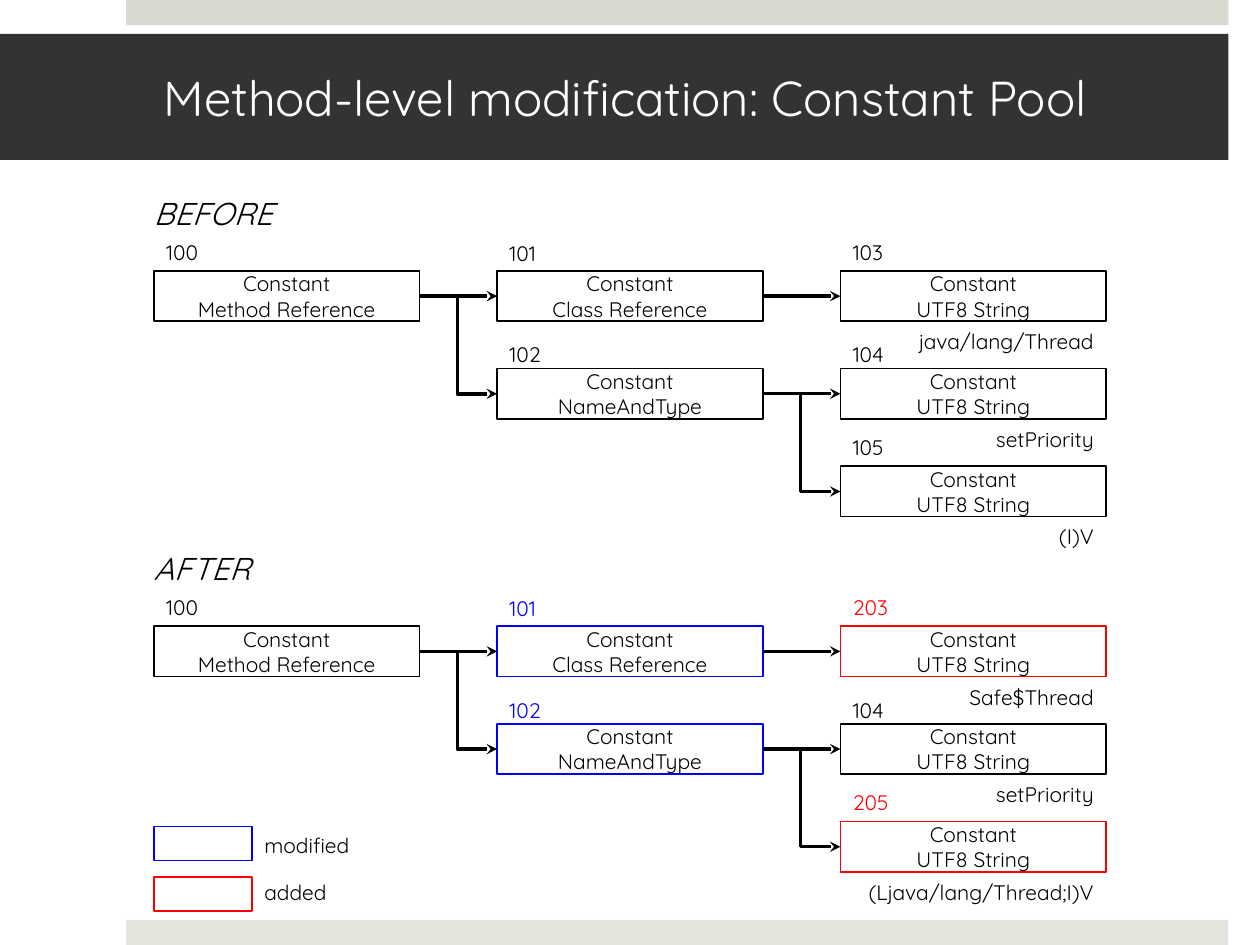
import copy
from dataclasses import dataclass

import pptx
import pptx.util
import pptx.dml.color
import pptx.enum.shapes
import pptx.enum.text
import pptx.oxml
import pptx.oxml.ns
from pptx.util import Inches

ALIGN = pptx.enum.text.PP_ALIGN
ANCHOR = pptx.enum.text.MSO_ANCHOR
qn = pptx.oxml.ns.qn


@dataclass(frozen=True)
class Theme:
    font: str = "Quicksand"
    title: int = 28
    heading: int = 18
    body: int = 12
    black: str = "000000"
    white: str = "FFFFFF"
    dark: str = "333333"
    top_band: str = "D6D9CD"
    bottom_band: str = "E4E6DE"
    modified: str = "0000FF"
    added: str = "FF0000"


THEME = Theme()


def rgb(value):
    return pptx.dml.color.RGBColor.from_string(value)


def write(tf, text, size=THEME.body, color=THEME.black, italic=None,
          align=ALIGN.LEFT, anchor=ANCHOR.TOP):
    """Fill a text frame with one paragraph; a newline is a line break."""
    tf.word_wrap = True
    tf.vertical_anchor = anchor
    p = tf.paragraphs[0]
    p.alignment = align
    p.text = text
    for r in p.runs:
        r.font.name, r.font.size = THEME.font, pptx.util.Pt(size)
        r.font.color.rgb, r.font.italic = rgb(color), italic
    for br in p._p.findall(qn("a:br")):
        br.append(copy.deepcopy(p.runs[0]._r.rPr))


class Painter:
    def __init__(self, s, theme):
        self.s, self.theme = s, theme

    def rect(self, x, y, w, h, fill, line=None):
        sp = self.s.shapes.add_shape(
            pptx.enum.shapes.MSO_SHAPE.RECTANGLE,
            Inches(x), Inches(y), Inches(w), Inches(h))
        sp.shadow.inherit = False
        sp.fill.solid()
        sp.fill.fore_color.rgb = rgb(fill)
        if line:
            sp.line.color.rgb = rgb(line)
            sp.line.width = pptx.util.Pt(1)
        else:
            sp.line.fill.background()
        return sp

    def title(self, text):
        sp = self.rect(0, 0.27, 9.75, 1, self.theme.dark)
        tf = sp.text_frame
        tf.margin_left, tf.margin_right = Inches(1.3), Inches(0.3)
        write(tf, text, size=self.theme.title, color=self.theme.white,
              anchor=ANCHOR.MIDDLE)

    def box(self, x, y, w, h, text, line):
        sp = self.rect(x, y, w, h, self.theme.white, line)
        write(sp.text_frame, text, align=ALIGN.CENTER, anchor=ANCHOR.MIDDLE)

    def label(self, x, y, w, h, text, **style):
        sp = self.s.shapes.add_textbox(Inches(x), Inches(y), Inches(w), Inches(h))
        write(sp.text_frame, text, **style)

    def arrow(self, x1, y1, x2, y2, kind="STRAIGHT"):
        c = self.s.shapes.add_connector(
            getattr(pptx.enum.shapes.MSO_CONNECTOR, kind),
            Inches(x1), Inches(y1), Inches(x2), Inches(y2))
        c.line.color.rgb = rgb(self.theme.black)
        c.line.width = pptx.util.Pt(2)
        pptx.oxml.ns  # namespace helpers are used through qn
        tail = c.line._get_or_add_ln().makeelement(qn("a:tailEnd"), {"type": "stealth"})
        c.line._get_or_add_ln().append(tail)
        spPr = c._element.spPr
        spPr.append(spPr.makeelement(qn("a:effectLst"), {}))
        return c

    def branch(self, x1, y1, x2, y2):
        """Arrow that runs down from the start, then right to the end."""
        drop, run = y2 - y1, x2 - x1
        left, top = (x1 + x2 - drop) / 2, (y1 + y2 - run) / 2
        c = self.arrow(left, top, left + drop, top + run, kind="ELBOW")
        spPr = c._element.spPr
        spPr.find(qn("a:prstGeom")).set("prst", "bentConnector2")
        xfrm = spPr.find(qn("a:xfrm"))
        xfrm.set("rot", str(270 * 60000))
        xfrm.set("flipH", "1")


# Constant pool grid
COLS = [1.22, 3.945, 6.67]
ROW_GAP = 0.775
BOX_W, BOX_H = 2.11, 0.4
TAG_W, LABEL_H = 0.54, 0.3
BRANCH_X = 0.315

# column, row, tag height above the box, text
ENTRIES = [
    (0, 0, 0.3, "Constant\nMethod Reference"),
    (1, 0, 0.29, "Constant\nClass Reference"),
    (2, 0, 0.3, "Constant\nUTF8 String"),
    (1, 1, 0.26, "Constant\nNameAndType"),
    (2, 1, 0.26, "Constant\nUTF8 String"),
    (2, 2, 0.3, "Constant\nUTF8 String"),
]
ARROWS = [(0, 0), (1, 0), (1, 1)]    # column and row an arrow leaves
BRANCHES = [(0, 0), (1, 1)]          # where it also forks to the next row


def draw_pool(painter, heading, top, tags, colors, values):
    painter.label(1.12, top - 0.66, 1.28, 0.4, heading,
                  size=THEME.heading, italic=True)
    for (col, row, rise, text), tag in zip(ENTRIES, tags):
        x, y = COLS[col], top + row * ROW_GAP
        color = colors.get(tag, THEME.black)
        painter.box(x, y, BOX_W, BOX_H, text, color)
        painter.label(x, y - rise, TAG_W, LABEL_H, tag, color=color)
    for row, value in enumerate(values):
        indent = TAG_W if row == 1 else 0
        painter.label(COLS[2] + indent, top + row * ROW_GAP + 0.41,
                      BOX_W - indent, LABEL_H, value, align=ALIGN.RIGHT)
    for col, row in ARROWS:
        y = top + row * ROW_GAP + BOX_H / 2
        painter.arrow(COLS[col] + BOX_W, y, COLS[col + 1], y)
    for col, row in BRANCHES:
        x, y = COLS[col + 1], top + row * ROW_GAP + BOX_H / 2
        painter.branch(x - BRANCH_X, y, x, y + ROW_GAP)


def main():
    prs = pptx.Presentation()
    prs.slide_width, prs.slide_height = Inches(10), Inches(7.5)
    painter = Painter(prs.slides.add_slide(prs.slide_layouts[6]), THEME)

    # Bands and title
    painter.rect(1, 0, 8.75, 0.2, THEME.top_band)
    painter.rect(1, 7.3, 8.75, 0.2, THEME.bottom_band)
    painter.title("Method-level modification: Constant Pool")

    # Constant pool before and after
    draw_pool(painter, "BEFORE", 2.15,
              ["100", "101", "103", "102", "104", "105"], {},
              ["java/lang/Thread", "setPriority", "(I)V"])
    draw_pool(painter, "AFTER", 4.97,
              ["100", "101", "203", "102", "104", "205"],
              {"101": THEME.modified, "102": THEME.modified,
               "203": THEME.added, "205": THEME.added},
              ["Safe$Thread", "setPriority", "(Ljava/lang/Thread;I)V"])

    # Legend
    for y, label_y, text, color in [(6.56, 6.56, "modified", THEME.modified),
                                    (6.96, 6.93, "added", THEME.added)]:
        painter.rect(COLS[0], y, 0.78, 0.27, THEME.white, color)
        painter.label(2, label_y, 1, LABEL_H, text)

    prs.save("out.pptx")


if __name__ == "__main__":
    main()
